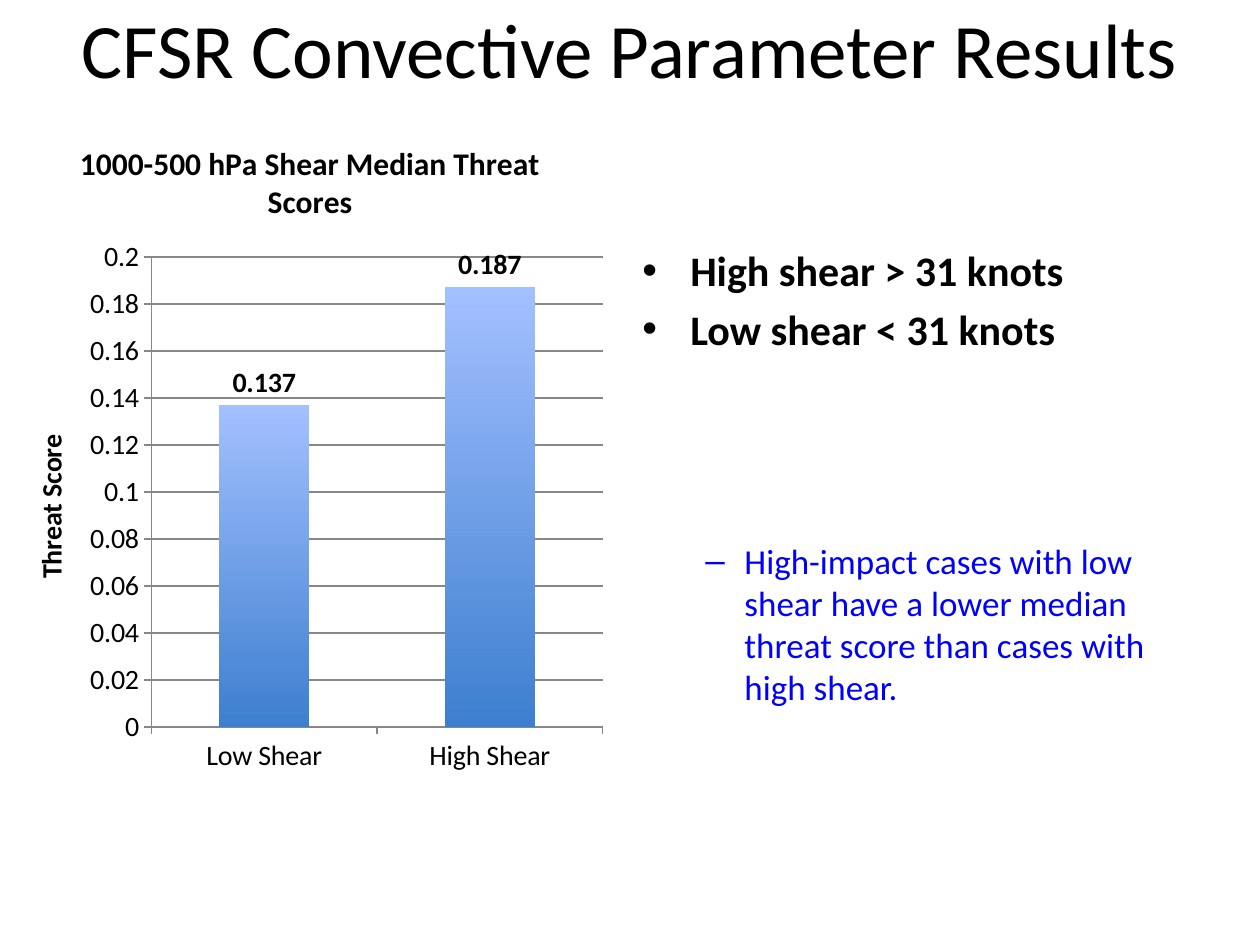
from dataclasses import dataclass

from lxml.etree import SubElement
from pptx import Presentation
from pptx.chart.data import CategoryChartData
from pptx.dml.color import RGBColor
from pptx.enum.chart import XL_CHART_TYPE, XL_LABEL_POSITION, XL_TICK_MARK
from pptx.enum.text import MSO_ANCHOR, PP_ALIGN
from pptx.oxml import parse_xml
from pptx.oxml.ns import nsdecls, qn
from pptx.util import Inches, Pt

FONT = "Calibri"
BLACK, BLUE, GRAY = "000000", "0000FF", "878787"


@dataclass
class Bullet:
    text: str
    mark: str
    size: float
    color: str
    bold: bool
    margin: float
    hanging: float
    before: float


BULLETS = [
    Bullet("High shear > 31 knots", "•", 24, BLACK, True, 0.38, 0.38, 0),
    Bullet("Low shear < 31 knots", "•", 24, BLACK, True, 0.38, 0.38, 4.8),
    Bullet("High-impact cases with low shear have a lower median threat score "
           "than cases with high shear.", "–", 20, BLUE, False, 0.81, 0.31, 106),
]


def rgb(value: str) -> RGBColor:
    return RGBColor.from_string(value)


def style_font(font, size: float, color: str = BLACK, bold: bool = False) -> None:
    font.name = FONT
    font.size = Pt(size)
    font.bold = bold
    font.color.rgb = rgb(color)


def add_run(p, text: str, size: float, color: str = BLACK, bold: bool = False) -> None:
    r = p.add_run()
    r.text = text
    style_font(r.font, size, color, bold)


def add_text_frame(s, left: float, top: float, width: float, height: float):
    tf = s.shapes.add_textbox(*map(Inches, (left, top, width, height))).text_frame
    tf.word_wrap = True
    return tf


def add_bullet(p, bullet: Bullet) -> None:
    p.space_before = Pt(bullet.before)
    pPr = p._p.get_or_add_pPr()
    pPr.set("marL", str(Inches(bullet.margin)))
    pPr.set("indent", str(-Inches(bullet.hanging)))
    SubElement(pPr, qn("a:buFont")).set("typeface", "Arial")
    SubElement(pPr, qn("a:buChar")).set("char", bullet.mark)
    add_run(p, bullet.text, bullet.size, bullet.color, bullet.bold)


def set_plot_layout(chart, x: float, y: float, w: float, h: float) -> None:
    """Fix the inner plot area as fractions of the chart."""
    plot_area = chart._chartSpace.chart.plotArea
    for old in plot_area.findall(qn("c:layout")):
        plot_area.remove(old)
    plot_area.insert(0, parse_xml(
        f'<c:layout {nsdecls("c")}><c:manualLayout><c:layoutTarget val="inner"/>'
        '<c:xMode val="edge"/><c:yMode val="edge"/>'
        f'<c:x val="{x}"/><c:y val="{y}"/><c:w val="{w}"/><c:h val="{h}"/>'
        '</c:manualLayout></c:layout>'))


def add_shear_chart(s) -> None:
    data = CategoryChartData()
    data.categories = ["Low Shear", "High Shear"]
    data.add_series("Series 1", [0.137, 0.187])
    chart = s.shapes.add_chart(XL_CHART_TYPE.COLUMN_CLUSTERED, Inches(0.04), Inches(0.92),
                               Inches(4.84), Inches(5.33), data).chart
    style_font(chart.font, 10)
    chart.has_legend = False
    add_run(chart.chart_title.text_frame.paragraphs[0],
            "1000-500 hPa Shear Median Threat Scores", 18, bold=True)
    chart.chart_title.include_in_layout = False
    set_plot_layout(chart, 0.24, 0.21, 0.74, 0.7)

    for axis in (chart.category_axis, chart.value_axis):
        style_font(axis.tick_labels.font, 16)
        axis.major_tick_mark = XL_TICK_MARK.OUTSIDE
        axis.format.line.color.rgb = rgb(GRAY)
    values = chart.value_axis
    values.minimum_scale, values.maximum_scale, values.major_unit = 0, 0.2, 0.02
    values.has_major_gridlines = True
    values.major_gridlines.format.line.color.rgb = rgb(GRAY)
    add_run(values.axis_title.text_frame.paragraphs[0], "Threat Score", 16, bold=True)

    plot = chart.plots[0]
    plot.gap_width = 150
    plot.vary_by_categories = False
    fill = plot.series[0].format.fill
    fill.gradient()
    fill.gradient_angle = 270
    for stop, color in zip(fill.gradient_stops, ("A3C0FF", "3D7FCF")):
        stop.color.rgb = rgb(color)
    plot.has_data_labels = True
    labels = plot.data_labels
    labels.show_value = True
    labels.position = XL_LABEL_POSITION.OUTSIDE_END
    style_font(labels.font, 16, bold=True)


def main() -> None:
    prs = Presentation()
    prs.slide_width, prs.slide_height = Inches(10), Inches(7.5)
    s = prs.slides.add_slide(prs.slide_layouts[6])

    tf = add_text_frame(s, 0.5, -0.25, 9, 1.25)
    tf.vertical_anchor = MSO_ANCHOR.MIDDLE
    p = tf.paragraphs[0]
    p.alignment = PP_ALIGN.CENTER
    add_run(p, "CFSR Convective Parameter Results", 44)

    add_shear_chart(s)

    tf = add_text_frame(s, 5, 1.42, 4.42, 4.32)
    tf.margin_top = Inches(0.52)
    for i, bullet in enumerate(BULLETS):
        add_bullet(tf.add_paragraph() if i else tf.paragraphs[0], bullet)

    prs.save("out.pptx")


if __name__ == "__main__":
    main()
